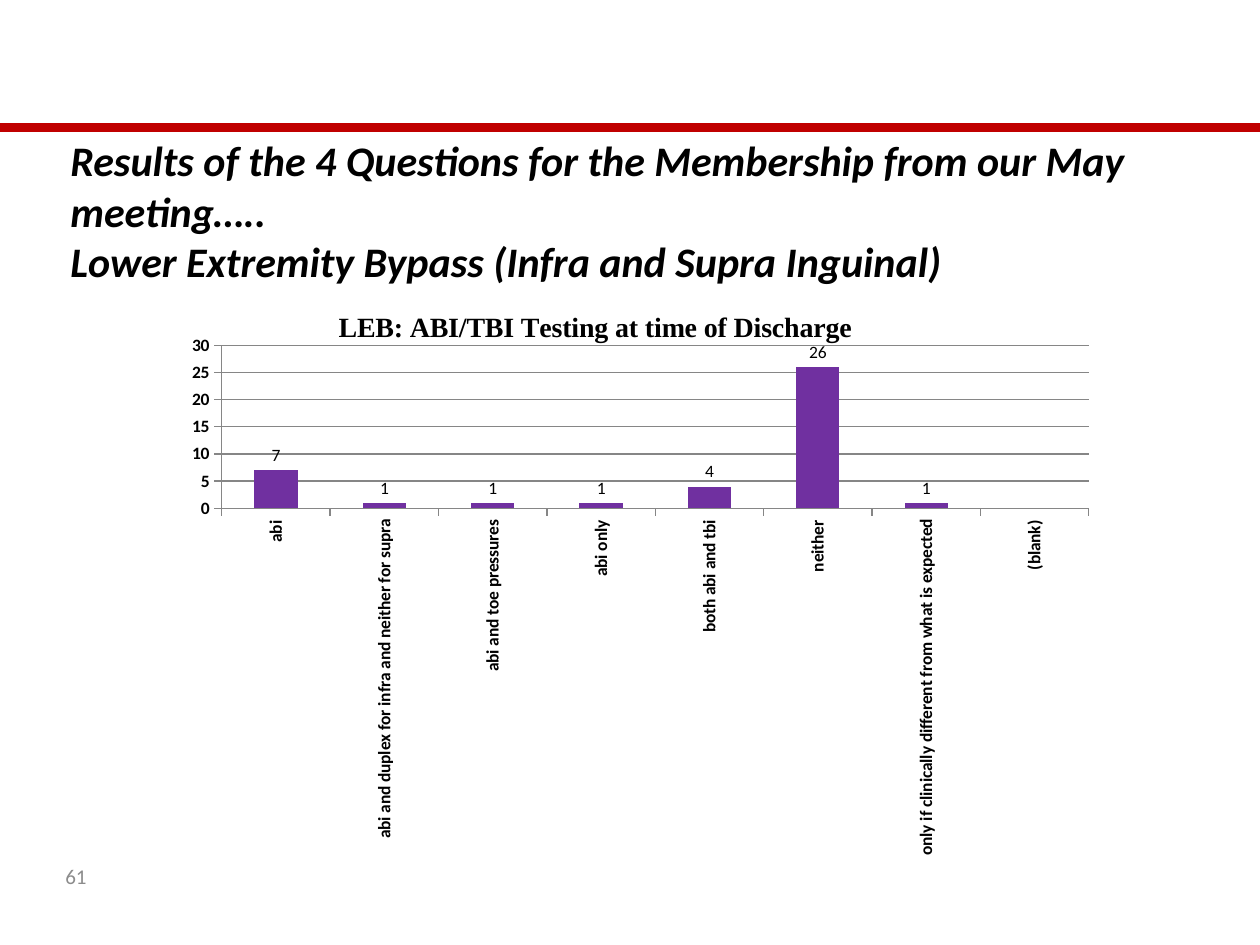
from lxml.etree import SubElement as Sub
from pptx import Presentation
from pptx.chart.data import CategoryChartData as Data
from pptx.dml.color import RGBColor as RGB
from pptx.enum.chart import XL_CHART_TYPE as Kind, XL_LABEL_POSITION as Pos, XL_TICK_MARK as Tick
from pptx.enum.shapes import MSO_CONNECTOR as Conn
from pptx.enum.text import MSO_ANCHOR as Anchor
from pptx.oxml import parse_xml
from pptx.oxml.ns import nsdecls, qn
from pptx.util import Inches, Pt

HEAD = [
    "Results of the 4 Questions for the Membership from our May meeting…..",
    "Lower Extremity Bypass (Infra and Supra Inguinal)",
]
PAGE = "61"
TITLE = "LEB: ABI/TBI Testing at time of Discharge"
TESTS = [
    ("abi", 7),
    ("abi and duplex for infra and neither for supra", 1),
    ("abi and toe pressures", 1),
    ("abi only", 1),
    ("both abi and tbi", 4),
    ("neither", 26),
    ("only if clinically different from what is expected", 1),
    ("(blank)", None),
]
THEME = dict(
    sans="Calibri", serif="Times New Roman",
    ink=RGB(0, 0, 0), mute=RGB(0x8C, 0x8C, 0x8C), grid=RGB(0x86, 0x86, 0x86),
    bar=RGB(0x70, 0x30, 0xA0), rule=RGB(0xC0, 0, 0),
    head=24, title=16, page=12, label=10,
)


def style(font, size, ink="ink", face="sans", bold=False, slant=False):
    font.name, font.size = THEME[face], Pt(THEME[size])
    font.color.rgb = THEME[ink]
    font.bold, font.italic = bold, slant


def write(slide, box, lines, anchor, **look):
    frame = slide.shapes.add_textbox(*map(Inches, box)).text_frame
    frame.word_wrap, frame.vertical_anchor = True, anchor
    frame.text = "\n".join(lines)
    for para in frame.paragraphs:
        for run in para.runs:
            style(run.font, **look)


def place(node, slot, inner=False, **spots):
    for old in node.findall(qn("c:layout")):
        node.remove(old)
    target = '<c:layoutTarget val="inner"/>' if inner else ""
    modes = "".join(f'<c:{k}Mode val="edge"/>' for k in "xy")
    parts = "".join(f'<c:{k} val="{v}"/>' for k, v in spots.items())
    node.insert(slot, parse_xml(
        f'<c:layout {nsdecls("c")}><c:manualLayout>{target}{modes}{parts}'
        '</c:manualLayout></c:layout>'))


def draw(slide):
    data = Data()
    data.categories = [name for name, _ in TESTS]
    data.add_series("Series 1", [count for _, count in TESTS])
    box = map(Inches, (1.39, 2.14, 7.4, 4.65))
    chart = slide.shapes.add_chart(Kind.COLUMN_CLUSTERED, *box, data).chart
    style(chart.font, "label")
    chart.has_legend = False

    frame = chart.chart_title.text_frame
    frame.text = TITLE
    style(frame.paragraphs[0].runs[0].font, "title", face="serif", bold=True)
    place(chart.chart_title._element, 1, x=0.17, y=0.06)
    area = chart.element.find(".//" + qn("c:plotArea"))
    place(area, 0, inner=True, x=0.05, y=0.13, w=0.93, h=0.28)

    for axis in (chart.category_axis, chart.value_axis):
        style(axis.tick_labels.font, "label", bold=True)
        axis.major_tick_mark, axis.minor_tick_mark = Tick.OUTSIDE, Tick.NONE
        axis.format.line.color.rgb = THEME["grid"]
    turn = chart.category_axis._element.find(".//" + qn("a:bodyPr"))
    turn.set("rot", "-5400000")
    turn.set("vert", "horz")
    scale = chart.value_axis
    scale.minimum_scale, scale.maximum_scale, scale.major_unit = 0, 30, 5
    scale.major_gridlines.format.line.color.rgb = THEME["grid"]

    plot = chart.plots[0]
    plot.gap_width, plot.vary_by_categories = 150, False
    fill = plot.series[0].format.fill
    fill.solid()
    fill.fore_color.rgb = THEME["bar"]
    plot.has_data_labels = True
    labels = plot.data_labels
    labels.show_value, labels.position = True, Pos.OUTSIDE_END
    style(labels.font, "label")


def main():
    deck = Presentation()
    deck.slide_width, deck.slide_height = Inches(10), Inches(7.5)
    slide = deck.slides.add_slide(deck.slide_layouts[6])
    ends = map(Inches, (0, 1.01, 10, 1.01))
    rule = slide.shapes.add_connector(Conn.STRAIGHT, *ends)
    rule.line.color.rgb, rule.line.width = THEME["rule"], Pt(5)
    Sub(rule._element.spPr, qn("a:effectLst"))
    write(slide, (0.42, 6.75, 2.25, 0.4), [PAGE], Anchor.MIDDLE, size="page", ink="mute")
    draw(slide)
    write(slide, (0.46, 1.02, 8.68, 1.31), HEAD, Anchor.TOP, size="head", bold=True, slant=True)
    deck.save("out.pptx")


if __name__ == "__main__":
    main()
